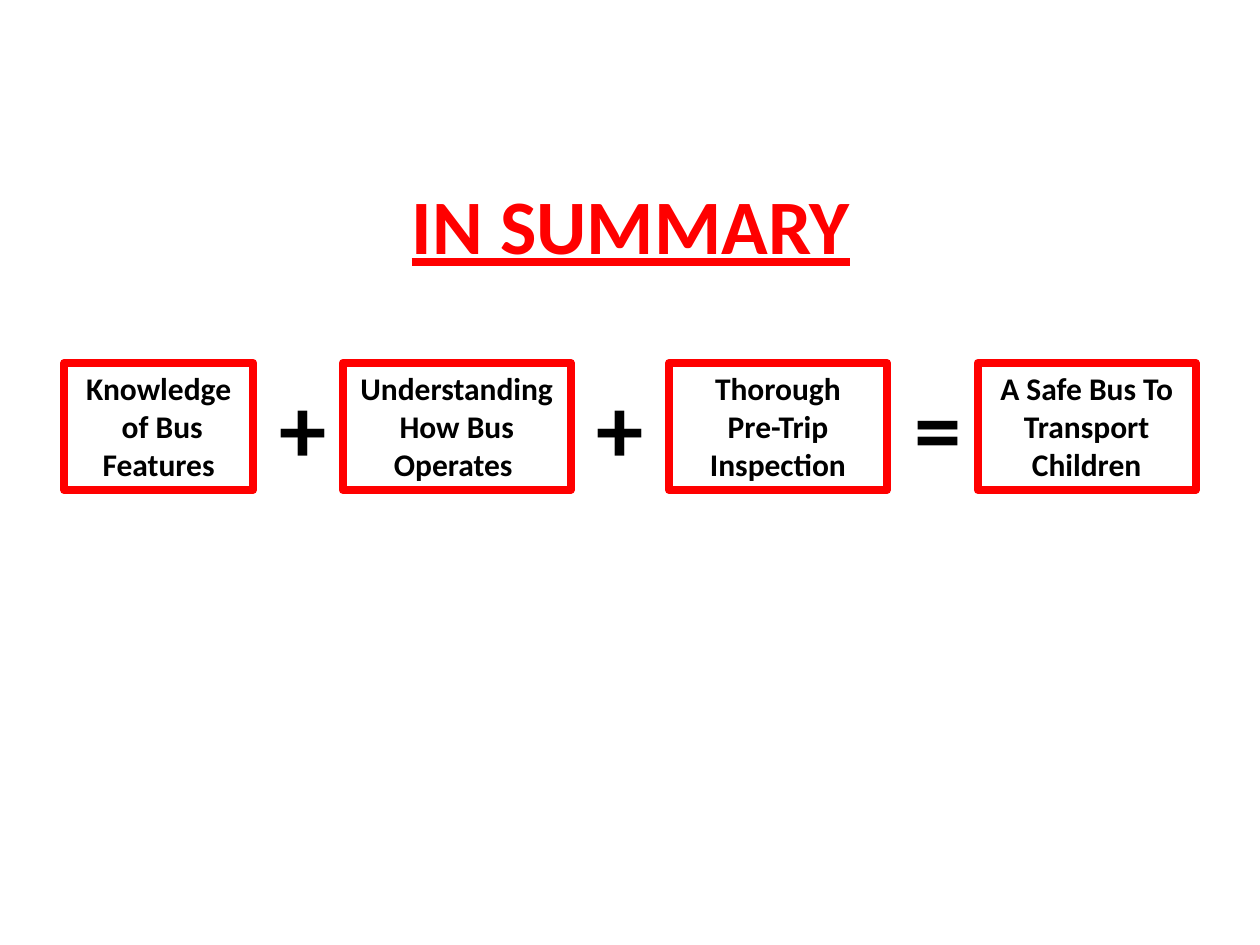
from dataclasses import dataclass

import pptx
import pptx.dml.color
import pptx.enum.shapes
import pptx.enum.text
import pptx.oxml.ns
import pptx.shapes.base
import pptx.slide
import pptx.util
from lxml import etree
from pptx.util import Pt

RED = pptx.dml.color.RGBColor(0xFF, 0x00, 0x00)
BLACK = pptx.dml.color.RGBColor(0x00, 0x00, 0x00)
FONT = "Calibri"

MARGIN = 36.72
ROW_TOP = 207.36
ROW_HEIGHT = 72.72
OPERATOR_WIDTH = 45.36
FIRST_OPERATOR_LEFT = 150.48
OPERATOR_STEP = 181.44


@dataclass(frozen=True)
class Term:
    text: str
    left: float
    width: float


TERMS = [
    Term("Knowledge\n of Bus Features", MARGIN, 108),
    Term("Understanding How Bus Operates ", 195.84, 130.32),
    Term("Thorough\nPre-Trip Inspection", 382.32, 124.56),
    Term("A Safe Bus To Transport Children", 558.72, 124.56),
]
OPERATORS = ["+", "+", "="]


def set_text(
    shape: pptx.shapes.base.BaseShape,
    text: str,
    size: float,
    color: pptx.dml.color.RGBColor,
    anchor: pptx.enum.text.MSO_ANCHOR = pptx.enum.text.MSO_ANCHOR.TOP,
    underline: bool = False,
) -> None:
    """Fill the shape with bold, centred, wrapping text."""
    frame = shape.text_frame
    frame.text = text
    frame.word_wrap = True
    frame.vertical_anchor = anchor
    for paragraph in frame.paragraphs:
        paragraph.alignment = pptx.enum.text.PP_ALIGN.CENTER
        for run in paragraph.runs:
            run.font.name = FONT
            run.font.size = Pt(size)
            run.font.bold = True
            run.font.underline = underline
            run.font.color.rgb = color


def add_title(slide: pptx.slide.Slide) -> None:
    title = slide.shapes.add_textbox(Pt(MARGIN), Pt(82.8), Pt(648), Pt(90))
    set_text(title, "IN SUMMARY", 44, RED, pptx.enum.text.MSO_ANCHOR.MIDDLE, True)


def add_term(slide: pptx.slide.Slide, term: Term) -> None:
    """Draw a red frame with rounded line joins around one term."""
    box = slide.shapes.add_shape(
        pptx.enum.shapes.MSO_SHAPE.RECTANGLE,
        Pt(term.left), Pt(ROW_TOP), Pt(term.width), Pt(ROW_HEIGHT),
    )
    box.shadow.inherit = False
    box.fill.background()
    box.line.color.rgb = RED
    box.line.width = Pt(4.5)
    line = box.line.fill._xPr
    etree.SubElement(line, pptx.oxml.ns.qn("a:round"))
    set_text(box, term.text, 18, BLACK)
    box.text_frame.auto_size = pptx.enum.text.MSO_AUTO_SIZE.SHAPE_TO_FIT_TEXT


def add_operator(slide: pptx.slide.Slide, symbol: str, left: float) -> None:
    box = slide.shapes.add_textbox(
        Pt(left), Pt(ROW_TOP), Pt(OPERATOR_WIDTH), Pt(ROW_HEIGHT)
    )
    set_text(box, symbol, 54, BLACK)
    box.text_frame.auto_size = pptx.enum.text.MSO_AUTO_SIZE.SHAPE_TO_FIT_TEXT


def main() -> None:
    presentation = pptx.Presentation()
    presentation.slide_width = Pt(720)
    presentation.slide_height = Pt(540)
    slide = presentation.slides.add_slide(presentation.slide_layouts[6])
    add_title(slide)
    for term in TERMS:
        add_term(slide, term)
    for index, symbol in enumerate(OPERATORS):
        add_operator(slide, symbol, FIRST_OPERATOR_LEFT + index * OPERATOR_STEP)
    presentation.save("out.pptx")


if __name__ == "__main__":
    main()
